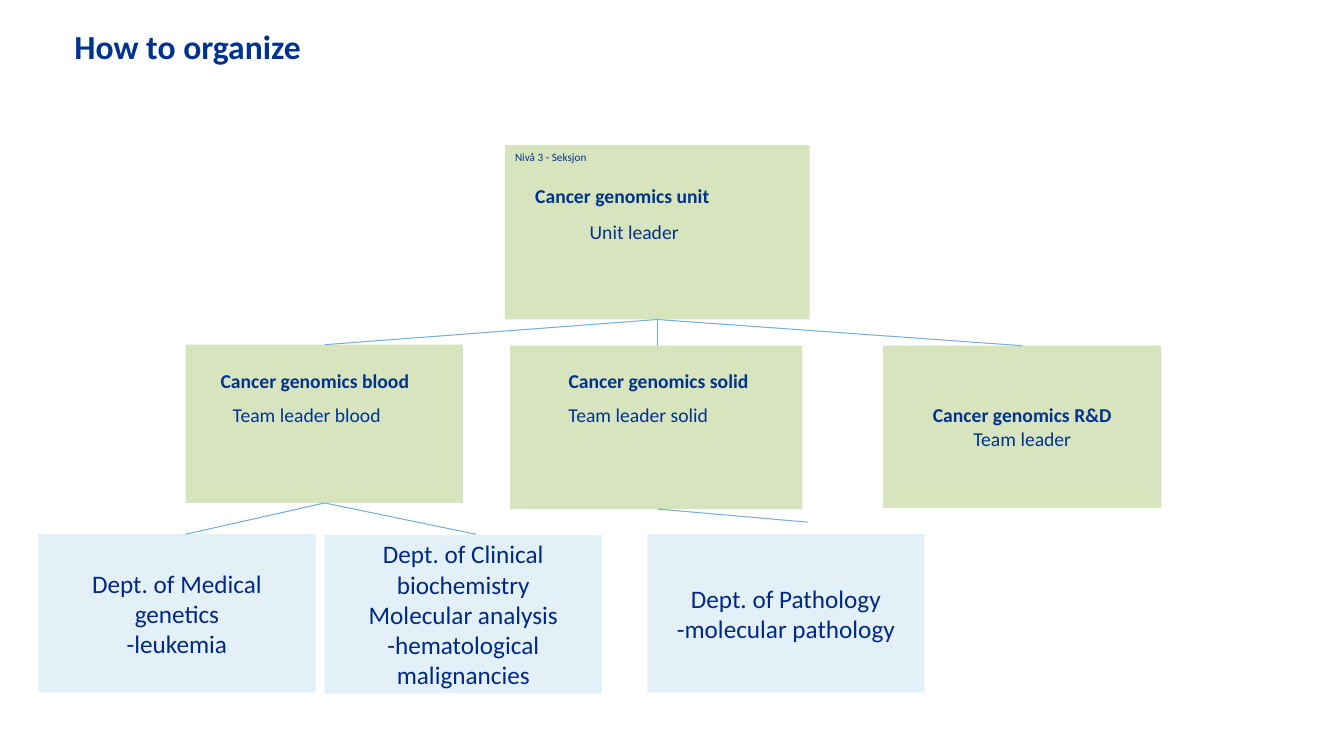
from dataclasses import dataclass

from lxml import etree
from pptx import Presentation
from pptx.dml.color import RGBColor
from pptx.enum import shapes, text
from pptx.oxml.ns import qn
from pptx.util import Inches, Pt

NAVY, DEEP_BLUE = "00338D", "002983"
GREEN, PALE_BLUE, LINE_BLUE = "D7E4BD", "E4F0F8", "75AEDA"


@dataclass
class Box:
    left: float
    top: float
    width: float
    height: float
    fill: str = GREEN
    lines: tuple[str, ...] = ()
    size: int = 14
    color: str = NAVY
    bold_first: bool = False


@dataclass
class Label:
    text: str
    left: float
    top: float
    width: float
    height: float = 0.34
    size: int = 14
    bold: bool = False
    wrap: bool = True


@dataclass
class Link:
    x1: float
    y1: float
    x2: float
    y2: float


UNIT_X, BLOOD_X = 6.52, 3.22
UNIT_BOTTOM, BLOOD_BOTTOM, DEPT_TOP = 3.17, 4.99, 5.3

BOXES = [
    Box(5.01, 1.44, 3.02, 1.73),
    Box(1.84, 3.42, 2.75, 1.57),
    Box(5.06, 3.43, 2.9, 1.62),
    Box(8.76, 3.43, 2.76, 1.61, lines=("Cancer genomics R&D", "Team leader"), bold_first=True),
] + [
    Box(left, top, 2.75, 1.57, PALE_BLUE, lines, 18, DEEP_BLUE)
    for left, top, lines in (
        (0.38, DEPT_TOP, ("Dept. of Medical genetics", "-leukemia")),
        (3.22, 5.31, ("Dept. of Clinical biochemistry", "Molecular analysis",
                      "-hematological", "malignancies")),
        (6.42, DEPT_TOP, ("Dept. of Pathology", "-molecular pathology")),
    )
]

LABELS = [
    Label("How to organize", 0.64, 0.21, 11.5, 1.45, 24, bold=True),
    Label("Nivå 3 - Seksjon", 5.01, 1.44, 1.1, 0.29, 8, wrap=False),
    Label("Cancer genomics unit", 5.21, 1.78, 2.02, bold=True, wrap=False),
    Label("Unit leader", 5.75, 2.13, 1.1, wrap=False),
    Label("Cancer genomics blood", 2.09, 3.61, 2.26, bold=True),
    Label("Team leader blood", 2.21, 3.95, 1.85),
    Label("Cancer genomics solid", 5.54, 3.61, 2.59, bold=True),
    Label("Team leader solid", 5.54, 3.95, 1.8),
]

LINKS = [
    Link(BLOOD_X, 3.42, UNIT_X, UNIT_BOTTOM),
    Link(UNIT_X, UNIT_BOTTOM, UNIT_X, 3.43),
    Link(UNIT_X, UNIT_BOTTOM, 10.14, 3.43),
    Link(UNIT_X, 5.05, 8.01, 5.18),
    Link(1.84, DEPT_TOP, BLOOD_X, BLOOD_BOTTOM),
    Link(4.72, DEPT_TOP, BLOOD_X, BLOOD_BOTTOM),
]


def rgb(color: str) -> RGBColor:
    return RGBColor.from_string(color)


def style(p, size: int, color: str, bold: bool) -> None:
    for r in p.runs:
        r.font.name = "Calibri"
        r.font.size = Pt(size)
        r.font.bold = bold
        r.font.color.rgb = rgb(color)


def add_box(s, box: Box) -> None:
    sp = s.shapes.add_shape(shapes.MSO_SHAPE.RECTANGLE, Inches(box.left), Inches(box.top),
                            Inches(box.width), Inches(box.height))
    sp.shadow.inherit = False
    sp.fill.solid()
    sp.fill.fore_color.rgb = rgb(box.fill)
    sp.line.fill.background()
    if not box.lines:
        return
    tf = sp.text_frame
    tf.word_wrap = True
    tf.vertical_anchor = text.MSO_ANCHOR.MIDDLE
    tf.text = "\n".join(box.lines)
    for i, p in enumerate(tf.paragraphs):
        p.alignment = text.PP_ALIGN.CENTER
        style(p, box.size, box.color, box.bold_first and i == 0)


def add_label(s, label: Label) -> None:
    sp = s.shapes.add_textbox(Inches(label.left), Inches(label.top),
                              Inches(label.width), Inches(label.height))
    tf = sp.text_frame
    tf.word_wrap = label.wrap
    tf.text = label.text
    style(tf.paragraphs[0], label.size, NAVY, label.bold)


def add_link(s, link: Link) -> None:
    sp = s.shapes.add_connector(shapes.MSO_CONNECTOR.STRAIGHT, Inches(link.x1), Inches(link.y1),
                                Inches(link.x2), Inches(link.y2))
    sp.line.color.rgb = rgb(LINE_BLUE)
    sp.line.width = Pt(0.75)
    etree.SubElement(sp.element.spPr, qn("a:effectLst"))


def main() -> None:
    prs = Presentation()
    prs.slide_width, prs.slide_height = Inches(13.33), Inches(7.5)
    s = prs.slides.add_slide(prs.slide_layouts[6])
    for box in BOXES:
        add_box(s, box)
    for label in LABELS:
        add_label(s, label)
    for link in LINKS:
        add_link(s, link)
    prs.save("out.pptx")


if __name__ == "__main__":
    main()
